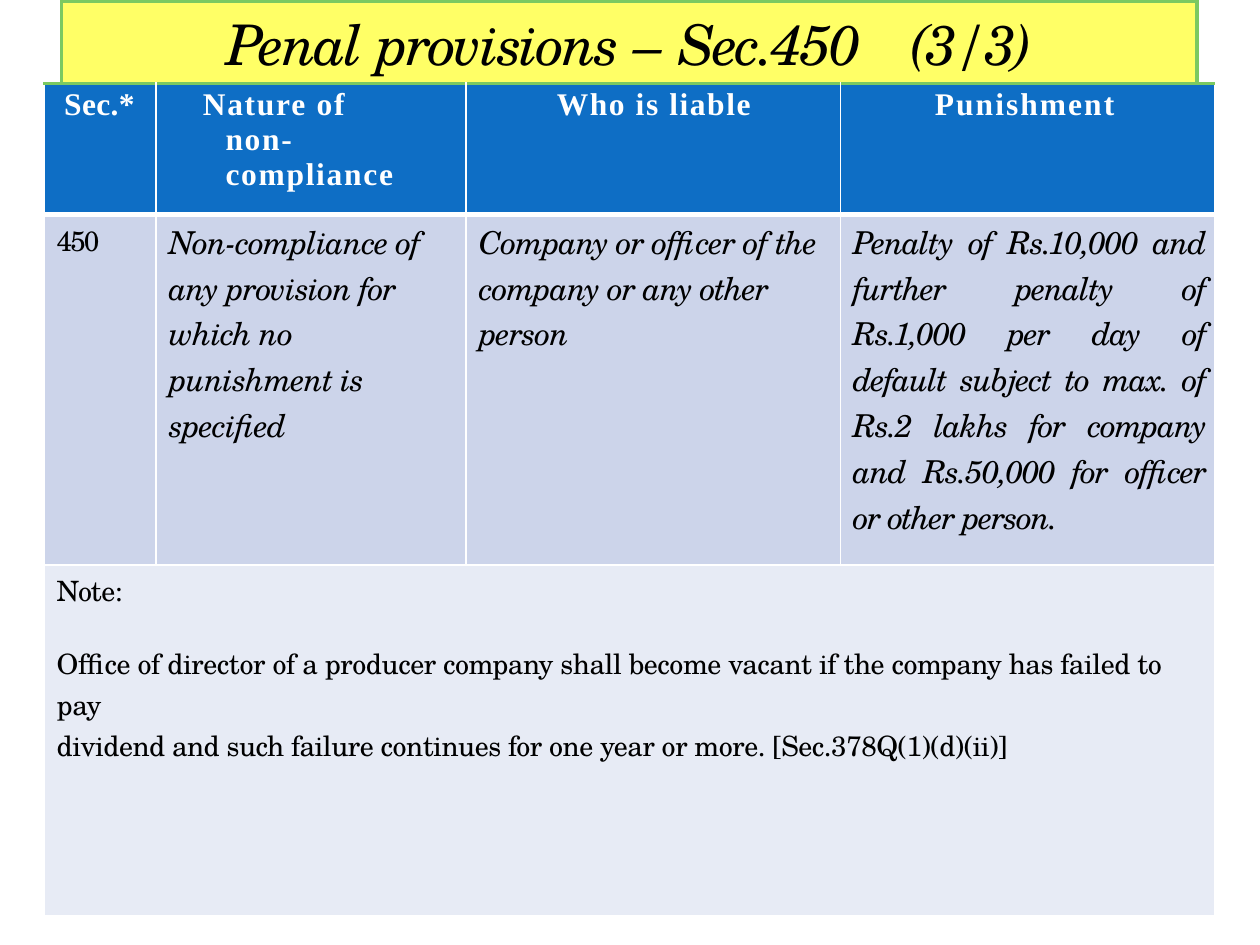
from lxml.etree import SubElement
from pptx import Presentation
from pptx.dml.color import RGBColor
from pptx.enum.text import PP_ALIGN
from pptx.oxml.ns import qn
from pptx.util import Inches, Pt

COLUMNS = [0.14, 0.75, 2.46, 2.97, 2.83, 0.14]
ROWS = [0.57, 1.04, 2.78, 2.78]
SIDES = ("L", "R", "T", "B")

GREEN_LINE, THIN_LINE = ("7BC961", 2.25), ("FFFFFF", 1)
THICK_LINE, BASE_LINE = ("FFFFFF", 3), ("FFFFFF", 1.5)
TITLE_BORDERS = dict.fromkeys(SIDES, GREEN_LINE)
HEADER_BORDERS = {"L": THIN_LINE, "R": THIN_LINE, "T": GREEN_LINE, "B": THICK_LINE}
BODY_BORDERS = {"L": THIN_LINE, "R": THIN_LINE, "T": THICK_LINE, "B": THIN_LINE}
NOTE_BORDERS = dict.fromkeys(SIDES, THIN_LINE)

SERIF = "TeX Gyre Schola"
TITLE_FONT = {"name": SERIF, "size": Pt(32), "italic": True, "bold": False}
HEADER_FONT = {"name": "Times New Roman", "size": Pt(18), "italic": False, "bold": True}
BODY_FONT = {"name": SERIF, "size": Pt(18), "italic": True, "bold": False}
NOTE_FONT = {"name": SERIF, "size": Pt(16), "italic": False, "bold": False}

TITLE = [("Penal ", -1.3), ("provisions ", -1.2), ("– ", 0.5),
         ("Sec.450\t", -1.4), ("(3/3)", -1.8)]

# first column, last column, text, letter spacing, left margin, first-line indent
HEADERS = [
    (0, 1, "Sec.*", 0.2, 0.16, 0),
    (2, 2, "Nature of\vnon-\vcompliance", 1, 0.55, -0.18),
    (3, 3, "Who is liable", 0.9, 0.72, 0),
    (4, 5, "Punishment", 1.2, 0.75, 0),
]

# first column, last column, text, letter spacing, alignment
DETAILS = [
    (2, 2, "Non-compliance of\vany provision for\vwhich no\vpunishment is\vspecified",
     -0.5, PP_ALIGN.LEFT),
    (3, 3, "Company or officer of the\vcompany or any other\vperson",
     -0.5, PP_ALIGN.LEFT),
    (4, 5, "Penalty of Rs.10,000 and\vfurther penalty of\vRs.1,000 per day of\v"
           "default subject to max. of\vRs.2 lakhs for company\v"
           "and Rs.50,000 for officer\vor other person.", -0.7, PP_ALIGN.JUSTIFY),
]

# text, letter spacing, space before
NOTES = [
    ("Note:", -0.3, 2.6),
    ("Office of director of a producer company shall become vacant if the company "
     "has failed to pay", -0.22, 18),
    ("dividend and such failure continues for one year or more. "
     "[Sec.378Q(1)(d)(ii)]", -0.25, 0),
]


def color(value):
    return RGBColor.from_string(value)


def add_table(slide):
    frame = slide.shapes.add_table(len(ROWS), len(COLUMNS), Inches(0.35), Inches(0.01),
                                   Inches(sum(COLUMNS)), Inches(sum(ROWS)))
    table = frame.table
    table.first_row = table.horz_banding = False
    for column, width in zip(table.columns, COLUMNS):
        column.width = Inches(width)
    for row, height in zip(table.rows, ROWS):
        row.height = Inches(height)
    return table


def set_borders(cell, borders):
    properties = cell._tc.get_or_add_tcPr()
    for side in SIDES:
        if side in borders:
            line_color, width = borders[side]
            line = SubElement(properties, qn(f"a:ln{side}"), w=str(Pt(width)))
            fill = SubElement(line, qn("a:solidFill"))
            SubElement(fill, qn("a:srgbClr"), val=line_color)


def format_cell(table, row, first, last, borders, fill, top=0.03, right=0):
    """Merge, outline and fill a span of one row; return its leading cell."""
    for column in range(first, last + 1):
        set_borders(table.cell(row, column), borders)
    cell = table.cell(row, first)
    if last > first:
        cell.merge(table.cell(row, last))
    margins = {"margin_left": 0, "margin_top": Inches(top),
               "margin_right": Inches(right), "margin_bottom": 0}
    for name, value in margins.items():
        setattr(cell, name, value)
    if fill:
        cell.fill.solid()
        cell.fill.fore_color.rgb = color(fill)
    else:
        cell.fill.background()
    return cell


def write_runs(paragraph, runs, font, font_color):
    """Add (text, letter spacing) runs; a vertical tab breaks the line."""
    for text, spacing in runs:
        for number, line in enumerate(text.split("\v")):
            if number:
                paragraph.add_line_break()
            run = paragraph.add_run()
            run.text = line
            for name, value in font.items():
                setattr(run.font, name, value)
            run.font.color.rgb = color(font_color)
            run.font._element.set("spc", str(round(spacing * 100)))


def format_paragraph(paragraph, before, left=0.1, indent=0, alignment=PP_ALIGN.LEFT):
    paragraph.space_before = Pt(before)
    paragraph.alignment = alignment
    properties = paragraph._p.get_or_add_pPr()
    if left:
        properties.set("marL", str(Inches(left)))
        properties.set("indent", str(Inches(indent)))


def fill_title(table):
    format_cell(table, 0, 0, 0, {"R": GREEN_LINE, "B": BASE_LINE}, None)
    format_cell(table, 0, 5, 5, {"L": GREEN_LINE, "B": BASE_LINE}, None)
    cell = format_cell(table, 0, 1, 4, TITLE_BORDERS, "FFFF66", top=0.01)
    paragraph = cell.text_frame.paragraphs[0]
    format_paragraph(paragraph, 0.7, left=0, alignment=PP_ALIGN.CENTER)
    tabs = SubElement(paragraph._p.get_or_add_pPr(), qn("a:tabLst"))
    SubElement(tabs, qn("a:tab"), pos=str(Inches(5.43)), algn="l")
    write_runs(paragraph, TITLE, TITLE_FONT, "000000")


def fill_headers(table):
    for first, last, text, spacing, left, indent in HEADERS:
        cell = format_cell(table, 1, first, last, HEADER_BORDERS, "0E6EC5")
        paragraph = cell.text_frame.paragraphs[0]
        format_paragraph(paragraph, 2.3, left, indent)
        write_runs(paragraph, [(text, spacing)], HEADER_FONT, "FFFFFF")


def fill_details(table):
    section = format_cell(table, 2, 0, 1, BODY_BORDERS, "CCD4EA", top=0.04)
    paragraph = section.text_frame.paragraphs[0]
    format_paragraph(paragraph, 2.6)
    write_runs(paragraph, [("450", -1.1)], NOTE_FONT, "000000")
    for first, last, text, spacing, alignment in DETAILS:
        right = 0.06 if alignment == PP_ALIGN.JUSTIFY else 0
        cell = format_cell(table, 2, first, last, BODY_BORDERS, "CCD4EA", right=right)
        paragraph = cell.text_frame.paragraphs[0]
        format_paragraph(paragraph, 2.4, alignment=alignment)
        write_runs(paragraph, [(text, spacing)], BODY_FONT, "000000")


def fill_notes(table):
    cell = format_cell(table, 3, 0, 5, NOTE_BORDERS, "E7EBF5", top=0.04)
    frame = cell.text_frame
    for number, (text, spacing, before) in enumerate(NOTES):
        paragraph = frame.add_paragraph() if number else frame.paragraphs[0]
        format_paragraph(paragraph, before)
        write_runs(paragraph, [(text, spacing)], NOTE_FONT, "000000")


def main():
    presentation = Presentation()
    presentation.slide_width, presentation.slide_height = Inches(10), Inches(7.5)
    slide = presentation.slides.add_slide(presentation.slide_layouts[6])
    table = add_table(slide)
    fill_title(table)
    fill_headers(table)
    fill_details(table)
    fill_notes(table)
    presentation.save("out.pptx")


if __name__ == "__main__":
    main()
